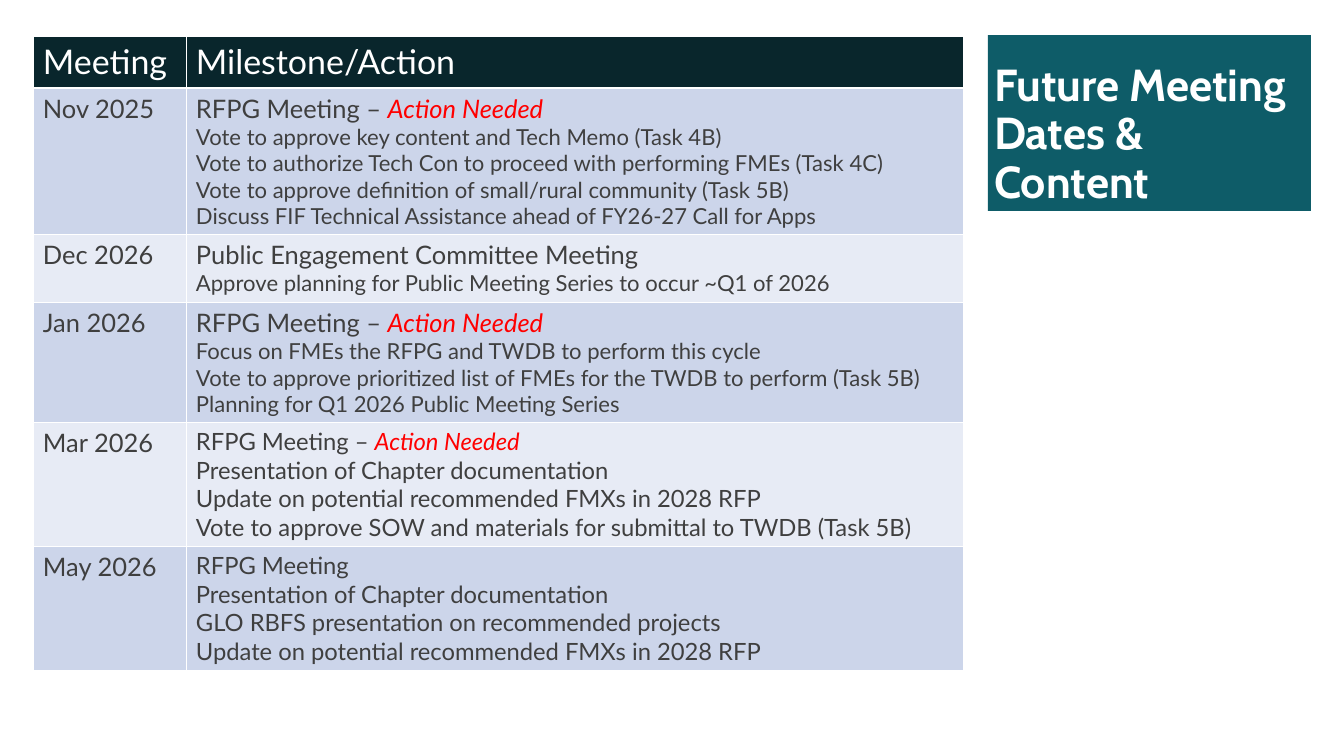
from lxml.etree import SubElement
from pptx import Presentation
from pptx.dml.color import RGBColor
from pptx.enum.text import MSO_ANCHOR as Anchor, MSO_AUTO_SIZE as AutoSize, PP_ALIGN as Align
from pptx.oxml.ns import qn
from pptx.util import Pt

PX = 914400 / 61.1
WHITE, GREY, RED = "FFFFFF", "3F3F3F", "FF0000"
DARK, TEAL = "09262C", "0E5C68"
BANDS = "CCD5EA", "E7EBF5"
ACTION = "Action Needed"

MEETINGS = [
    ("Nov 2025", 146, 30, 26, "RFPG Meeting – ", ACTION, [
        "Vote to approve key content and Tech Memo (Task 4B)",
        "Vote to authorize Tech Con to proceed with performing FMEs (Task 4C)",
        "Vote to approve definition of small/rural community (Task 5B)",
        "Discuss FIF Technical Assistance ahead of FY26-27 Call for Apps"]),
    ("Dec 2026", 68, 30, 26, "Public Engagement Committee Meeting", "", [
        "Approve planning for Public Meeting Series to occur ~Q1 of 2026"]),
    ("Jan 2026", 120, 30, 26, "RFPG Meeting – ", ACTION, [
        "Focus on FMEs the RFPG and TWDB to perform this cycle",
        "Vote to approve prioritized list of FMEs for the TWDB to perform (Task 5B)",
        "Planning for Q1 2026 Public Meeting Series"]),
    ("Mar 2026", 124, 28, 28, "RFPG Meeting – ", ACTION, [
        "Presentation of Chapter documentation",
        "Update on potential recommended FMXs in 2028 RFP",
        "Vote to approve SOW and materials for submittal to TWDB (Task 5B)"]),
    ("May 2026", 124, 28, 28, "RFPG Meeting", "", [
        "Presentation of Chapter documentation",
        "GLO RBFS presentation on recommended projects",
        "Update on potential recommended FMXs in 2028 RFP"]),
]


def px(n):
    """Turn whole pixels into EMU."""
    return round(n * PX)


def rgb(value):
    """Turn a hex string into a colour."""
    return RGBColor.from_string(value)


def add_text(p, text, size=30, color=GREY, font="Lato", bold=False, italic=False):
    """Add one formatted run to a paragraph."""
    r = p.add_run()
    r.text = text
    f = r.font
    f.name, f.size, f.bold, f.italic = font, Pt(size), bold, italic
    f.color.rgb = rgb(color)


class Deck:
    """Hold the style and the current slide."""

    def __init__(self, width, height):
        """Start a one-slide presentation."""
        self.prs = Presentation()
        self.prs.slide_width, self.prs.slide_height = px(width), px(height)
        self.slide = self.prs.slides.add_slide(self.prs.slide_layouts[5])

    def title(self, text, x, y, w, h):
        """Place the title on a filled panel."""
        sp = self.slide.shapes.title
        sp.left, sp.top, sp.width, sp.height = px(x), px(y), px(w), px(h)
        sp.fill.solid()
        sp.fill.fore_color.rgb = rgb(TEAL)
        tf = sp.text_frame
        tf.word_wrap, tf.auto_size = True, AutoSize.NONE
        tf.vertical_anchor = Anchor.BOTTOM
        p = tf.paragraphs[0]
        p.alignment, p.line_spacing = Align.LEFT, 0.9
        add_text(p, text, size=52.8, color=WHITE, font="Cabin", bold=True)

    def table(self, x, y, widths, heights):
        """Add an empty table with the given column and row sizes."""
        frame = self.slide.shapes.add_table(
            len(heights), len(widths), px(x), px(y), px(sum(widths)), px(sum(heights)))
        tbl = frame.table
        for col, w in zip(tbl.columns, widths):
            col.width = px(w)
        for row, h in zip(tbl.rows, heights):
            row.height = px(h)
        return tbl

    def cell(self, cell, fill, paragraphs, bottom=1):
        """Fill a cell with paragraphs, each a list of (text, format) runs."""
        cell.margin_left = cell.margin_right = px(10)
        cell.margin_top = cell.margin_bottom = px(5)
        tc_pr = cell._tc.get_or_add_tcPr()
        for side, width in zip("LRTB", (1, 1, 1, bottom)):
            ln = SubElement(tc_pr, qn(f"a:ln{side}"), w=str(Pt(width)))
            SubElement(SubElement(ln, qn("a:solidFill")), qn("a:srgbClr"), val=WHITE)
        cell.fill.solid()
        cell.fill.fore_color.rgb = rgb(fill)
        tf = cell.text_frame
        for i, runs in enumerate(paragraphs):
            p = tf.add_paragraph() if i else tf.paragraphs[0]
            for text, style in runs:
                add_text(p, text, **style)


def main():
    """Build the meeting schedule slide."""
    deck = Deck(1344, 756)
    deck.title("Future Meeting Dates & Content", 988, 35, 323, 176)
    tbl = deck.table(33, 36, [153, 777], [52] + [m[1] for m in MEETINGS])
    for c, heading in enumerate(("Meeting", "Milestone/Action")):
        deck.cell(tbl.cell(0, c), DARK, [[(heading, dict(size=40, color=WHITE))]], bottom=3)
    for i, (month, _, head, body, meeting, action, items) in enumerate(MEETINGS):
        fill = BANDS[i % 2]
        runs = [(meeting, dict(size=head))]
        if action:
            runs.append((action, dict(size=head, color=RED, italic=True)))
        lines = [[(item, dict(size=body))] for item in items]
        deck.cell(tbl.cell(i + 1, 0), fill, [[(month, {})]])
        deck.cell(tbl.cell(i + 1, 1), fill, [runs] + lines)
    deck.prs.save("out.pptx")


if __name__ == "__main__":
    main()
